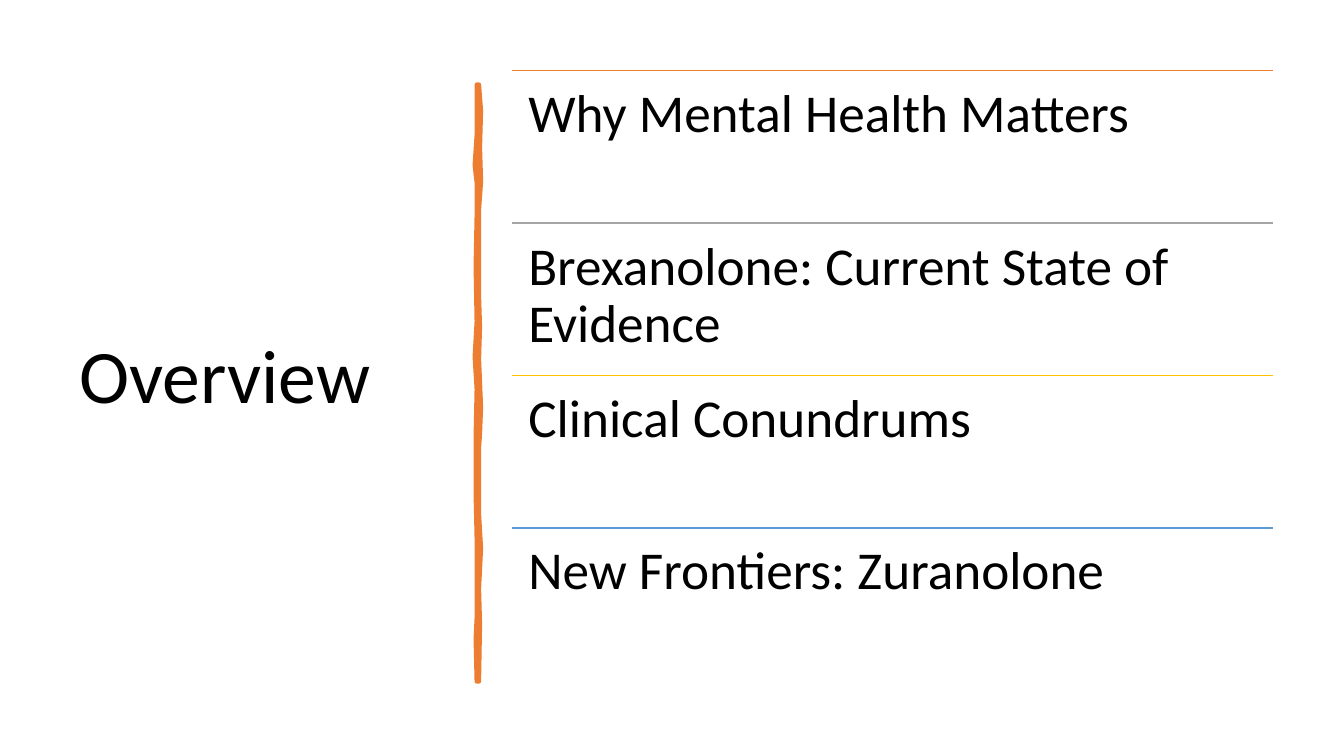
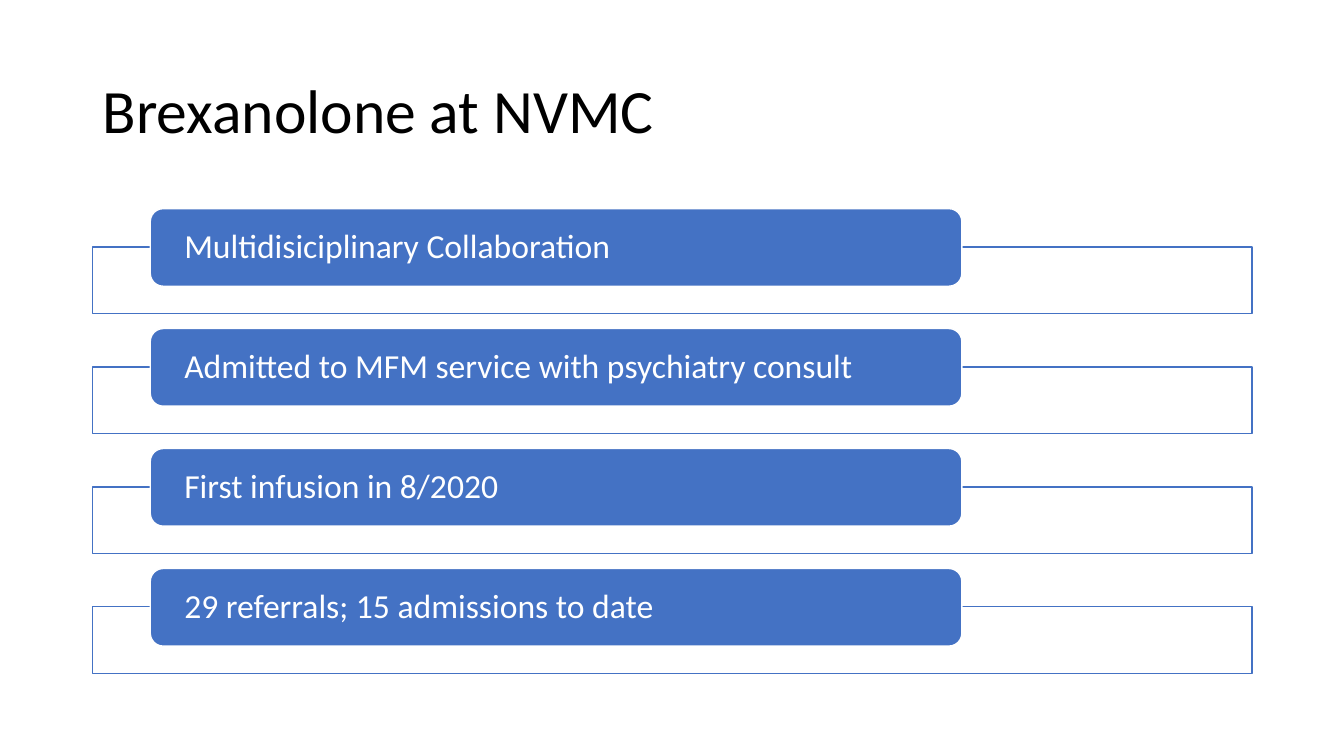
from lxml import etree
from pptx import Presentation
from pptx.dml.color import RGBColor
from pptx.enum.shapes import MSO_CONNECTOR, MSO_SHAPE
from pptx.enum.text import MSO_ANCHOR, PP_ALIGN
from pptx.oxml.ns import qn
from pptx.util import Inches, Pt

STRAIGHT = MSO_CONNECTOR.STRAIGHT
RECT, ROUND_RECT = MSO_SHAPE.RECTANGLE, MSO_SHAPE.ROUNDED_RECTANGLE
TOP, MIDDLE = MSO_ANCHOR.TOP, MSO_ANCHOR.MIDDLE
LEFT = PP_ALIGN.LEFT

FONT = "Calibri"
BLACK, WHITE, BLUE = "000000", "FFFFFF", "4472C4"
ORANGE, GRAY, GOLD, SKY = "ED7D31", "A5A5A5", "FFC000", "5B9BD5"

TOPICS = [
    ("Why Mental Health Matters", ORANGE),
    ("Brexanolone: Current State of Evidence", GRAY),
    ("Clinical Conundrums", GOLD),
    ("New Frontiers: Zuranolone", SKY),
]
MILESTONES = [
    "Multidisiciplinary Collaboration",
    "Admitted to MFM service with psychiatry consult",
    "First infusion in 8/2020",
    "29 referrals; 15 admissions to date",
]

# Brush stroke edges: (x, y) from the stroke's top left, down then up
STROKE_RIGHT = [
    (0.02, 0), (0.04, 0.26), (0.03, 0.62), (0.04, 0.96), (0.02, 1.24),
    (0.02, 2.1), (0.03, 2.4), (0.02, 2.72), (0.04, 3.2), (0.03, 3.46),
    (0.02, 3.6), (0.02, 4.26), (0.04, 4.6), (0.02, 5), (0.03, 5.35), (0.02, 5.92),
]
STROKE_LEFT = [
    (0, 5.92), (-0.01, 5.5), (0, 5.29), (0, 4.5), (-0.01, 4.06), (-0.01, 3.5),
    (0, 3.02), (-0.02, 2.7), (0, 2.35), (-0.01, 1.8), (0, 1.3), (0, 0.97),
    (-0.02, 0.8), (0, 0.5), (0, 0),
]


def rgb(value):
    return RGBColor.from_string(value)


def write(shape, text, size, color, anchor, inset_x, inset_y):
    frame = shape.text_frame
    frame.word_wrap = True
    frame.vertical_anchor = anchor
    frame.margin_left = frame.margin_right = Inches(inset_x)
    frame.margin_top = frame.margin_bottom = Inches(inset_y)
    para = frame.paragraphs[0]
    para.alignment = LEFT
    para.line_spacing = 0.9
    span = para.add_run()
    span.text = text
    span.font.name = FONT
    span.font.size = Pt(size)
    span.font.color.rgb = rgb(color)


def paint(shape, fill, line, weight):
    shape.shadow.inherit = False
    shape.fill.solid()
    shape.fill.fore_color.rgb = rgb(fill)
    shape.line.color.rgb = rgb(line)
    shape.line.width = Pt(weight)


def add_text(page, left, top, width, height, *style):
    box = page.shapes.add_textbox(Inches(left), Inches(top), Inches(width), Inches(height))
    write(box, *style)


def add_title(page, left, top, width, height, text, size):
    add_text(page, left, top, width, height, text, size, BLACK, MIDDLE, 0.1, 0.05)


def add_panel(page, kind, left, top, width, height, fill, line):
    panel = page.shapes.add_shape(kind, Inches(left), Inches(top), Inches(width), Inches(height))
    paint(panel, fill, line, 1)
    return panel


def add_rule(page, left, top, width, color):
    rule = page.shapes.add_connector(
        STRAIGHT, Inches(left), Inches(top), Inches(left + width), Inches(top))
    rule.line.color.rgb = rgb(color)
    rule.line.width = Pt(1)
    etree.SubElement(rule._element.spPr, qn("a:effectLst"))


def add_brush_stroke(page, left, top):
    points = [(Inches(left + x), Inches(top + y)) for x, y in STROKE_RIGHT + STROKE_LEFT]
    builder = page.shapes.build_freeform(*points[0])
    builder.add_line_segments(points[1:], close=True)
    paint(builder.convert_to_shape(), ORANGE, ORANGE, 3.25)


def add_topic_list(page, left, top, width, height):
    row_height = height / len(TOPICS)
    for index, (topic, color) in enumerate(TOPICS):
        row_top = top + index * row_height
        add_rule(page, left, row_top, width, color)
        add_text(page, left, row_top, width, row_height, topic, 38, BLACK, TOP, 0.16, 0.16)


def add_milestone_list(page, left, top, width, pitch):
    for index, milestone in enumerate(MILESTONES):
        row_top = top + index * pitch
        add_panel(page, RECT, left, row_top + 0.38, width, 0.66, WHITE, BLUE)
        label = add_panel(page, ROUND_RECT, left + 0.57, row_top, width * 0.7, 0.77, BLUE, WHITE)
        write(label, milestone, 24, WHITE, MIDDLE, 0.3, 0)


def build_overview(page):
    add_title(page, 0.69, 0.7, 3.74, 6.11, "Overview", 54)
    add_brush_stroke(page, 4.73, 0.84)
    add_topic_list(page, 5.08, 0.7, 7.55, 6.05)


def build_milestones(page):
    add_title(page, 0.92, 0.4, 11.5, 1.45, "Brexanolone at NVMC", 44)
    add_milestone_list(page, 0.92, 2.07, 11.5, 1.19)


def main():
    deck = Presentation()
    deck.slide_width, deck.slide_height = Inches(13.33), Inches(7.5)
    blank = deck.slide_layouts[6]
    for build in (build_overview, build_milestones):
        build(deck.slides.add_slide(blank))
    deck.save("out.pptx")


if __name__ == "__main__":
    main()
